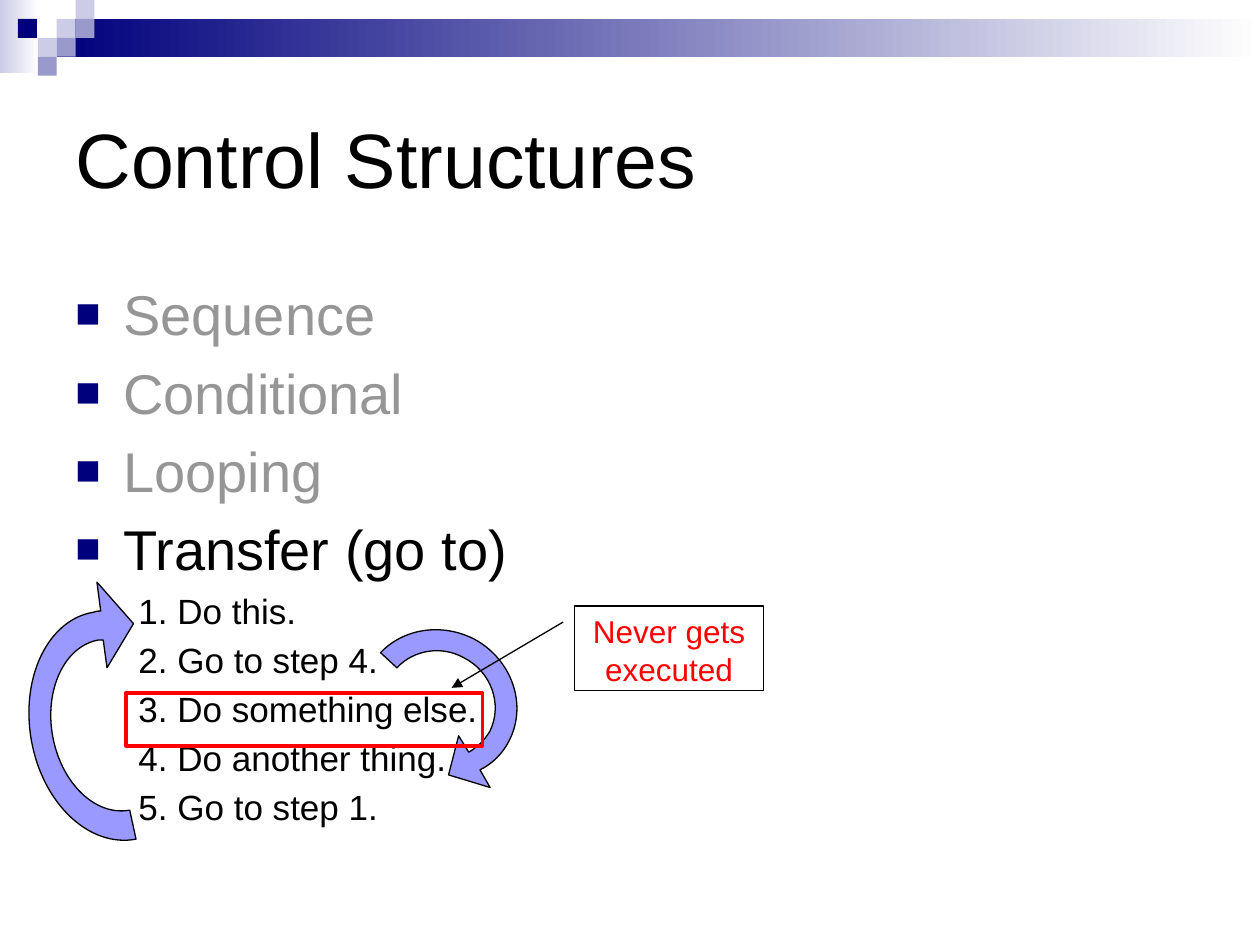
from lxml.etree import SubElement
from pptx import Presentation
from pptx.dml.color import RGBColor
from pptx.enum.shapes import MSO_SHAPE as SHAPE
from pptx.enum.text import MSO_ANCHOR as ANCHOR, PP_ALIGN as ALIGN
from pptx.oxml.ns import qn
from pptx.util import Inches, Pt

# Content
TITLE = "Control Structures"
STRUCTURES = [("Sequence", "969696"), ("Conditional", "969696"),
              ("Looping", "969696"), ("Transfer (go to)", "000000")]
STEPS = ["Do this.", "Go to step 4.", "Do something else.",
         "Do another thing.", "Go to step 1."]
NOTE = "Never gets executed"

FONT = "Arial"
NAVY, PALE, MID, WHITE = "00007D", "CCCCE6", "9999CC", "FFFFFF"
BLACK, RED, ARROW = "000000", "FF0000", "9999FF"

# Header decoration: gradient bands, then squares as (column, row, colour)
BANDS = [((0, 0, 0.31, 0.58), PALE), ((0.45, 0.15, 9.55, 0.3), NAVY)]
CELL = 0.15
SQUARES = [(3, 1, PALE), (4, 0, PALE), (4, 1, MID), (2, 2, PALE),
           (0.95, 1, NAVY), (3, 2, MID), (2, 3, MID)]

# Curved arrows: a start point, then lines (2 numbers) and Bezier curves (6)
SKIP_ARROW = [
    (3.72, 5.97), (3.79, 5.93, 3.85, 5.87, 3.89, 5.8),
    (3.99, 5.59, 3.9, 5.33, 3.68, 5.22), (3.5, 5.12, 3.28, 5.16, 3.15, 5.3),
    (3.02, 5.18), (3.2, 4.99, 3.5, 4.94, 3.76, 5.07),
    (4.06, 5.23, 4.19, 5.59, 4.04, 5.88), (3.99, 5.98, 3.91, 6.06, 3.81, 6.11),
    (3.89, 6.25), (3.56, 6.15), (3.64, 5.84)]
RETURN_ARROW = [
    (0.82, 5.08), (0.81, 5.08, 0.79, 5.08, 0.78, 5.08),
    (0.51, 5.13, 0.35, 5.48, 0.42, 5.85), (0.49, 6.22, 0.76, 6.48, 1.03, 6.43),
    (1.08, 6.66), (0.71, 6.73, 0.34, 6.38, 0.25, 5.88),
    (0.16, 5.38, 0.38, 4.92, 0.74, 4.86), (0.76, 4.85, 0.78, 4.85, 0.8, 4.85),
    (0.77, 4.62), (1.06, 4.95), (0.85, 5.3)]
UNITS = 100  # outline units per inch


def rgb(color):
    return RGBColor.from_string(color)


def style(sp, fill=None, line=None, width=0.75):
    sp.shadow.inherit = False
    if fill:
        sp.fill.solid()
        sp.fill.fore_color.rgb = rgb(fill)
    else:
        sp.fill.background()
    if line:
        sp.line.color.rgb = rgb(line)
        sp.line.width = Pt(width)
    else:
        sp.line.fill.background()


def add_box(slide, box, kind=SHAPE.RECTANGLE, **look):
    sp = slide.shapes.add_shape(kind, *map(Inches, box))
    style(sp, **look)
    return sp


def format_text(p, size, color):
    for r in p.runs:
        r.font.name, r.font.size = FONT, Pt(size)
        r.font.color.rgb = rgb(color)


def add_item(tf, text, size, color, margin, indent, bullet=False):
    p = tf.paragraphs[0] if not tf.text else tf.add_paragraph()
    p.text = text
    format_text(p, size, color)
    pPr = p._p.get_or_add_pPr()
    pPr.set("marL", str(Inches(margin)))
    pPr.set("indent", str(Inches(indent)))
    before = SubElement(pPr, qn("a:spcBef"))
    SubElement(before, qn("a:spcPct"), val="20000")
    if bullet:
        tint = SubElement(pPr, qn("a:buClr"))
        SubElement(tint, qn("a:srgbClr"), val=NAVY)
        SubElement(pPr, qn("a:buSzPct"), val="75000")
        SubElement(pPr, qn("a:buFont"), typeface=FONT)
        SubElement(pPr, qn("a:buChar"), char="■")


def add_curved_arrow(slide, segments):
    """Build the outline from its corners, then bend the curved segments."""
    scaled = [[round(v * UNITS) for v in seg] for seg in segments]
    corners = [seg[-2:] for seg in scaled]
    builder = slide.shapes.build_freeform(*corners[0], scale=Inches(1) / UNITS)
    builder.add_line_segments(corners[1:], close=True)
    sp = builder.convert_to_shape()
    left, top = (min(values) for values in zip(*corners))
    sides = list(sp._element.iter(qn("a:lnTo")))
    for side, seg in zip(sides, scaled[1:]):
        if len(seg) == 6:
            side.tag = qn("a:cubicBezTo")
            for i, (x, y) in enumerate((seg[:2], seg[2:4])):
                pt = SubElement(side, qn("a:pt"), x=str(x - left), y=str(y - top))
                side.insert(i, pt)
    style(sp, fill=ARROW, line=BLACK)


def main():
    prs = Presentation()
    prs.slide_width, prs.slide_height = Inches(10), Inches(7.5)
    slide = prs.slides.add_slide(prs.slide_layouts[5])

    # Header decoration
    for box, color in BANDS:
        sp = add_box(slide, box)
        sp.fill.gradient()
        sp.fill.gradient_angle = 0
        for stop, tint, position in zip(sp.fill.gradient_stops, (color, WHITE), (0, 1)):
            stop.color.rgb = rgb(tint)
            stop.position = position
    for col, row, color in SQUARES:
        add_box(slide, (col * CELL, row * CELL, CELL, CELL), fill=color)

    # Title
    title = slide.shapes.title
    title.left, title.top, title.width, title.height = map(Inches, (0.5, 0.5, 9, 1.5))
    tf = title.text_frame
    tf.text = TITLE
    tf.vertical_anchor = ANCHOR.MIDDLE
    tf.paragraphs[0].alignment = ALIGN.LEFT
    format_text(tf.paragraphs[0], 44, BLACK)

    # Structures and numbered steps
    tf = slide.shapes.add_textbox(*map(Inches, (0.5, 2.17, 9, 4.75))).text_frame
    tf.word_wrap = True
    for text, color in STRUCTURES:
        add_item(tf, text, 32, color, 0.38, -0.38, bullet=True)
    for number, text in enumerate(STEPS, 1):
        add_item(tf, f"{number}.\t{text}", 20, BLACK, 0.81, -0.31)

    # Jumps between steps
    for segments in (SKIP_ARROW, RETURN_ARROW):
        add_curved_arrow(slide, segments)

    # Skipped step and its callout
    add_box(slide, (1, 5.5, 2.83, 0.42), line=RED, width=2.25)
    note = add_box(slide, (4.56, 4.81, 1.5, 0.67), SHAPE.LINE_CALLOUT_1, line=BLACK)
    for i, value in enumerate((0.19, -0.06, 0.97, -0.65)):
        note.adjustments[i] = value
    SubElement(note.line._get_or_add_ln(), qn("a:tailEnd"), type="triangle")
    tf = note.text_frame
    tf.text = NOTE
    tf.word_wrap = True
    tf.vertical_anchor = ANCHOR.TOP
    tf.paragraphs[0].alignment = ALIGN.CENTER
    format_text(tf.paragraphs[0], 18, RED)

    prs.save("out.pptx")


if __name__ == "__main__":
    main()
